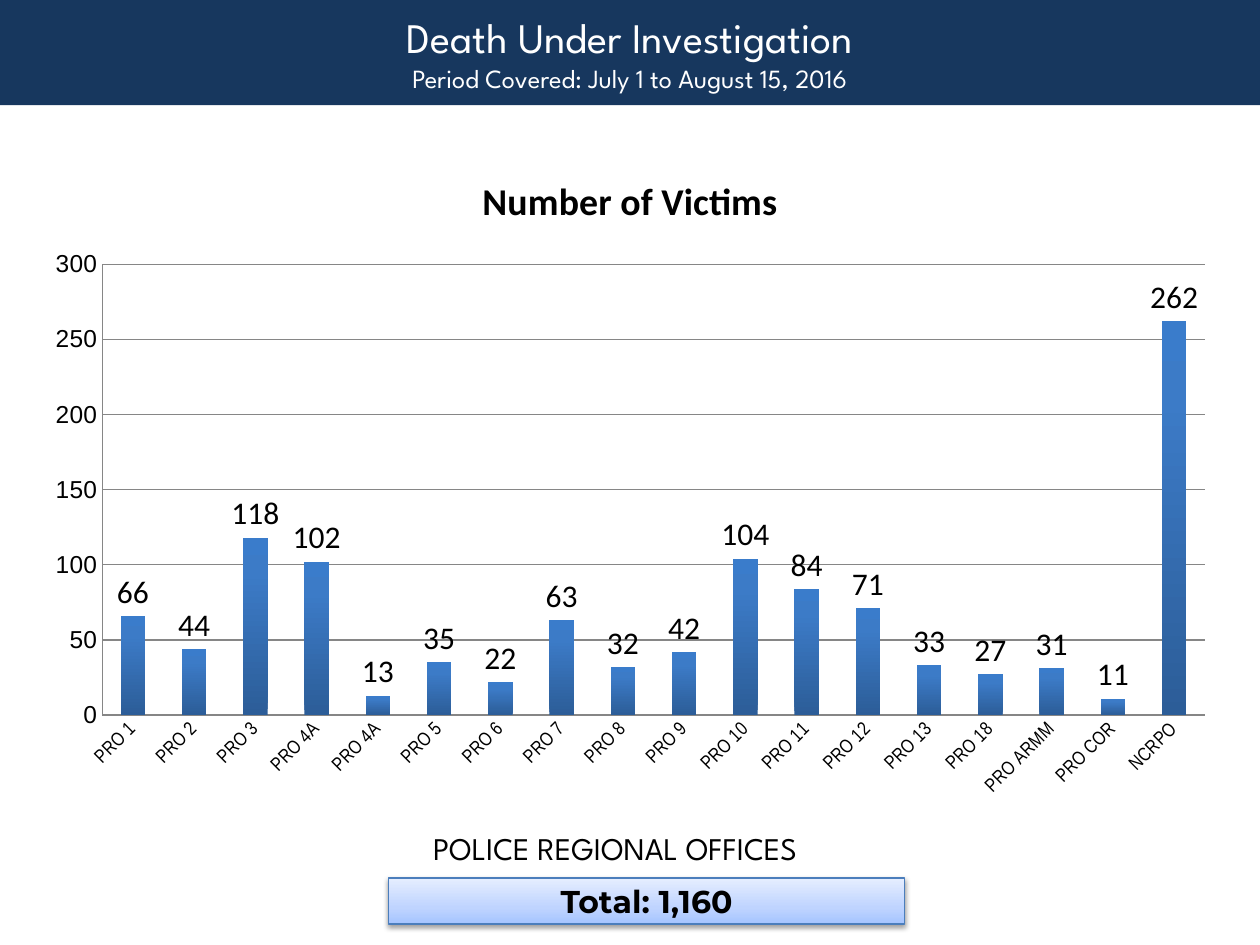
"""Build the slide on deaths under investigation by police regional office."""
from copy import deepcopy

from lxml import etree
from pptx import Presentation
from pptx import util as u
from pptx.chart import data as cd
from pptx.dml import color as dml
from pptx.enum import chart as ch, shapes, text
from pptx.oxml import ns

HEAD = [("Death Under Investigation", 24),
        ("Period Covered: July 1 to August 15, 2016", 15)]
NAME = "Number of Victims"
AXIS = "POLICE REGIONAL OFFICES"
TOTAL = "Total: 1,160"
ROWS = [("PRO 1", 66), ("PRO 2", 44), ("PRO 3", 118), ("PRO 4A", 102),
        ("PRO 4A", 13), ("PRO 5", 35), ("PRO 6", 22), ("PRO 7", 63),
        ("PRO 8", 32), ("PRO 9", 42), ("PRO 10", 104), ("PRO 11", 84),
        ("PRO 12", 71), ("PRO 13", 33), ("PRO 18", 27), ("PRO ARMM", 31),
        ("PRO COR", 11), ("NCRPO", 262)]

NAVY = dml.RGBColor(0x17, 0x37, 0x5E)
WHITE = dml.RGBColor(0xFF, 0xFF, 0xFF)
BLACK = dml.RGBColor(0, 0, 0)
GRAY = dml.RGBColor(0x86, 0x86, 0x86)
EDGE = dml.RGBColor(0x4B, 0x7E, 0xBC)
PALE = [(0, dml.RGBColor(0xA4, 0xC4, 0xFF)),
        (0.35, dml.RGBColor(0xBF, 0xD4, 0xFF)),
        (1, dml.RGBColor(0xE6, 0xEE, 0xFF))]
BLUE = [(0, dml.RGBColor(0x2C, 0x5D, 0x98)),
        (0.8, dml.RGBColor(0x3C, 0x7B, 0xC7)),
        (1, dml.RGBColor(0x3A, 0x7C, 0xCB))]

HEAD_BOX = (0, 0, 25.4, 2.12)
CHART_BOX = (0.64, 2.97, 24.13, 13.34)
AXIS_BOX = (8.48, 16.59, 11.43, 1.03)
TOTAL_BOX = (7.83, 17.7, 10.41, 0.93)


def place(box):
    return [u.Cm(n) for n in box]


def style(font, name, size, color=BLACK, bold=False):
    font.name, font.size, font.bold = name, u.Pt(size), bold
    font.color.rgb = color


def blend(fill, root, stops):
    fill.gradient()
    fill.gradient_angle = 90
    held = root.find(".//" + ns.qn("a:gsLst"))
    held.append(deepcopy(held[-1]))
    for stop, (pos, color) in zip(fill.gradient_stops, stops):
        stop.position, stop.color.rgb = pos, color


def shade(shape):
    shape.shadow.inherit = False
    glow = etree.SubElement(
        shape._element.spPr.find(ns.qn("a:effectLst")), ns.qn("a:outerShdw"),
        blurRad=str(u.Pt(3.1)), dist=str(u.Pt(1.6)), dir="5400000",
        rotWithShape="0")
    tint = etree.SubElement(glow, ns.qn("a:srgbClr"), val=str(BLACK))
    etree.SubElement(tint, ns.qn("a:alpha"), val="38000")


def add_head(slide):
    head = slide.shapes.title
    head.left, head.top, head.width, head.height = place(HEAD_BOX)
    head.fill.solid()
    head.fill.fore_color.rgb = NAVY
    frame = head.text_frame
    frame.text = "\n".join(line for line, _ in HEAD)
    frame.auto_size = text.MSO_AUTO_SIZE.NONE
    frame.vertical_anchor = text.MSO_ANCHOR.MIDDLE
    for para, (_, size) in zip(frame.paragraphs, HEAD):
        para.alignment = text.PP_ALIGN.CENTER
        style(para.font, "League Spartan", size, WHITE)


def add_bars(slide):
    data = cd.CategoryChartData()
    data.categories = [name for name, _ in ROWS]
    data.add_series(NAME, [count for _, count in ROWS])
    chart = slide.shapes.add_chart(
        ch.XL_CHART_TYPE.COLUMN_CLUSTERED, *place(CHART_BOX), data).chart
    style(chart.font, "Calibri", 18)
    chart.has_legend = False
    title = chart.chart_title.text_frame
    title.text = NAME
    style(title.paragraphs[0].font, "Calibri", 21.6, bold=True)

    plot = chart.plots[0]
    plot.gap_width, plot.vary_by_categories = 150, False
    bars = plot.series[0]
    blend(bars.format.fill, bars._element, BLUE)
    tags = bars.data_labels
    tags.show_value = True
    tags.position = ch.XL_LABEL_POSITION.OUTSIDE_END
    style(tags.font, "Calibri", 18)

    cats, vals = chart.category_axis, chart.value_axis
    for axis, name, size in [(cats, "Arial Narrow", 11), (vals, "Arial", 14)]:
        axis.major_tick_mark = axis.minor_tick_mark = ch.XL_TICK_MARK.NONE
        axis.format.line.color.rgb = GRAY
        axis.format.line.width = u.Pt(0.75)
        style(axis.tick_labels.font, name, size)
    cats._element.find(".//" + ns.qn("a:bodyPr")).set("rot", "-2700000")
    vals.minimum_scale, vals.maximum_scale, vals.major_unit = 0, 300, 50
    grid = vals.major_gridlines.format.line
    grid.color.rgb, grid.width = GRAY, u.Pt(0.75)


def add_foot(slide):
    note = slide.shapes.add_textbox(*place(AXIS_BOX)).text_frame
    note.text, note.word_wrap = AXIS, True
    note.auto_size = text.MSO_AUTO_SIZE.SHAPE_TO_FIT_TEXT
    style(note.paragraphs[0].font, "League Spartan", 18)

    total = slide.shapes.add_shape(
        shapes.MSO_SHAPE.RECTANGLE, *place(TOTAL_BOX))
    blend(total.fill, total._element, PALE)
    total.line.color.rgb, total.line.width = EDGE, u.Pt(0.75)
    shade(total)
    frame = total.text_frame
    frame.text = TOTAL
    frame.vertical_anchor = text.MSO_ANCHOR.MIDDLE
    para = frame.paragraphs[0]
    para.alignment = text.PP_ALIGN.CENTER
    style(para.font, "Montserrat", 18, bold=True)


def main():
    deck = Presentation()
    deck.slide_width, deck.slide_height = u.Cm(25.4), u.Cm(19.05)
    slide = deck.slides.add_slide(deck.slide_layouts.get_by_name("Title Only"))
    add_head(slide)
    add_bars(slide)
    add_foot(slide)
    deck.save("out.pptx")


if __name__ == "__main__":
    main()
